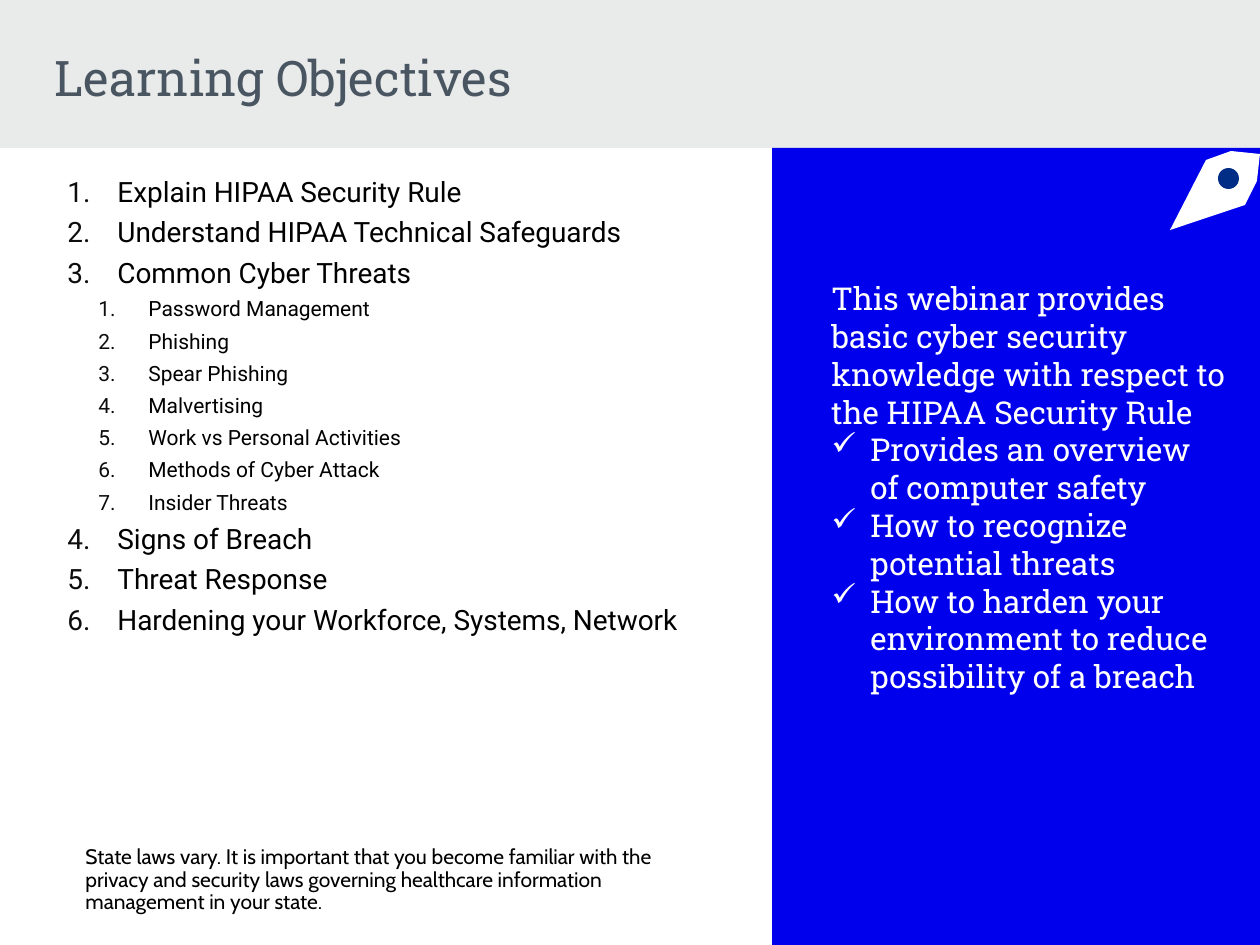
from lxml.etree import SubElement
from pptx import Presentation
from pptx.dml.color import RGBColor
from pptx.enum.shapes import MSO_SHAPE
from pptx.enum.text import MSO_ANCHOR, MSO_AUTO_SIZE, PP_ALIGN
from pptx.oxml.ns import qn
from pptx.util import Pt

PX = 914400 / 126  # EMU in one pixel

OBJECTIVES = [
    (0, "Explain HIPAA Security Rule"),
    (0, "Understand HIPAA Technical Safeguards"),
    (0, "Common Cyber Threats"),
    (1, "Password Management"),
    (1, "Phishing"),
    (1, "Spear Phishing"),
    (1, "Malvertising"),
    (1, "Work vs Personal Activities"),
    (1, "Methods of Cyber Attack"),
    (1, "Insider Threats"),
    (0, "Signs of Breach"),
    (0, "Threat Response"),
    (0, "Hardening your Workforce, Systems, Network"),
]
LEVELS = [{"size": 16, "margin": 63}, {"size": 12, "margin": 94}]
WEBINAR = ("This webinar provides basic cyber security knowledge "
           "with respect to the HIPAA Security Rule")
BENEFITS = [
    "Provides an overview of computer safety",
    "How to recognize potential threats",
    "How to harden your environment to reduce possibility of a breach",
]
STATE_LAWS = ("State laws vary. It is important that you become familiar with "
              "the privacy and security laws governing healthcare information "
              "management in your state.")
ROCKET = [(1257, 181), (1260, 154), (1231, 151), (1206, 160), (1170, 230), (1245, 205)]


def px(length):
    return round(length * PX)


def color(value):
    return RGBColor.from_string(value)


def apply(target, values):
    for name, value in values.items():
        setattr(target, name, value)


def paint(shape, fill):
    shape.shadow.inherit = False
    shape.fill.solid()
    shape.fill.fore_color.rgb = color(fill)
    shape.line.fill.background()


def add_preset(slide, preset, box, fill):
    paint(slide.shapes.add_shape(preset, *map(px, box)), fill)


def add_outline(slide, points, fill):
    builder = slide.shapes.build_freeform(*points[0], scale=PX)
    builder.add_line_segments(points[1:], close=True)
    paint(builder.convert_to_shape(), fill)


def prepare_frame(shape, anchor=MSO_ANCHOR.TOP):
    frame = shape.text_frame
    apply(frame, {"word_wrap": True, "auto_size": MSO_AUTO_SIZE.NONE,
                  "vertical_anchor": anchor})
    return frame


def add_frame(slide, box):
    return prepare_frame(slide.shapes.add_textbox(*map(px, box)))


def set_bullet(paragraph, margin, hang, tag, tint, **attributes):
    properties = paragraph._p.get_or_add_pPr()
    properties.set("marL", str(px(margin)))
    properties.set("indent", str(-px(hang)))
    bullet_color = SubElement(properties, qn("a:buClr"))
    SubElement(bullet_color, qn("a:srgbClr"), val=tint)
    SubElement(properties, qn(tag), **attributes)


def write(paragraph, text, font, size, tint, **layout):
    apply(paragraph, {"alignment": PP_ALIGN.LEFT, **layout})
    run = paragraph.add_run()
    run.text = text
    apply(run.font, {"name": font, "size": Pt(size)})
    run.font.color.rgb = color(tint)


def next_paragraph(frame, index):
    return frame.add_paragraph() if index else frame.paragraphs[0]


def add_title(slide, text, box):
    title = slide.shapes.title
    apply(title, dict(zip(("left", "top", "width", "height"), map(px, box))))
    frame = prepare_frame(title, MSO_ANCHOR.MIDDLE)
    write(frame.paragraphs[0], text, "Roboto Slab", 28, "495662", line_spacing=0.9)
    # Bring the title in front of the bands
    slide.shapes._spTree.append(title._element)


def add_objectives(slide, box):
    frame = add_frame(slide, box)
    for index, (level, text) in enumerate(OBJECTIVES):
        paragraph = next_paragraph(frame, index)
        style = LEVELS[level]
        set_bullet(paragraph, style["margin"], 50, "a:buAutoNum", "0D0D0D",
                   type="arabicPeriod")
        write(paragraph, text, "Roboto", style["size"], "000000",
              level=level, space_before=Pt(4 if index else 0))


def add_summary(slide, box):
    frame = add_frame(slide, box)
    for index, text in enumerate([WEBINAR, *BENEFITS]):
        paragraph = next_paragraph(frame, index)
        if index:
            set_bullet(paragraph, 39, 39, "a:buChar", "FFFFFF", char="✓")
        write(paragraph, text, "Roboto Slab", 18, "FFFFFF")


def main():
    deck = Presentation()
    apply(deck, {"slide_width": px(1260), "slide_height": px(945)})
    slide = deck.slides.add_slide(deck.slide_layouts[5])

    # Header band, side panel and title
    add_preset(slide, MSO_SHAPE.RECTANGLE, (0, 0, 1260, 148), "E9EAEA")
    add_preset(slide, MSO_SHAPE.RECTANGLE, (772, 148, 488, 797), "0000EC")
    add_title(slide, "Learning Objectives", (42, 32, 1086, 97))

    # Summary, footnote and objectives
    add_summary(slide, (819, 273, 420, 432))
    footnote = add_frame(slide, (73, 840, 646, 82))
    write(footnote.paragraphs[0], STATE_LAWS, "Cabin", 12, "000000", line_spacing=0.9)
    add_objectives(slide, (42, 168, 725, 672))

    # Rocket tip with its window
    add_outline(slide, ROCKET, "FFFFFF")
    add_preset(slide, MSO_SHAPE.OVAL, (1218, 168, 21, 21), "002D85")

    deck.save("out.pptx")


if __name__ == "__main__":
    main()
